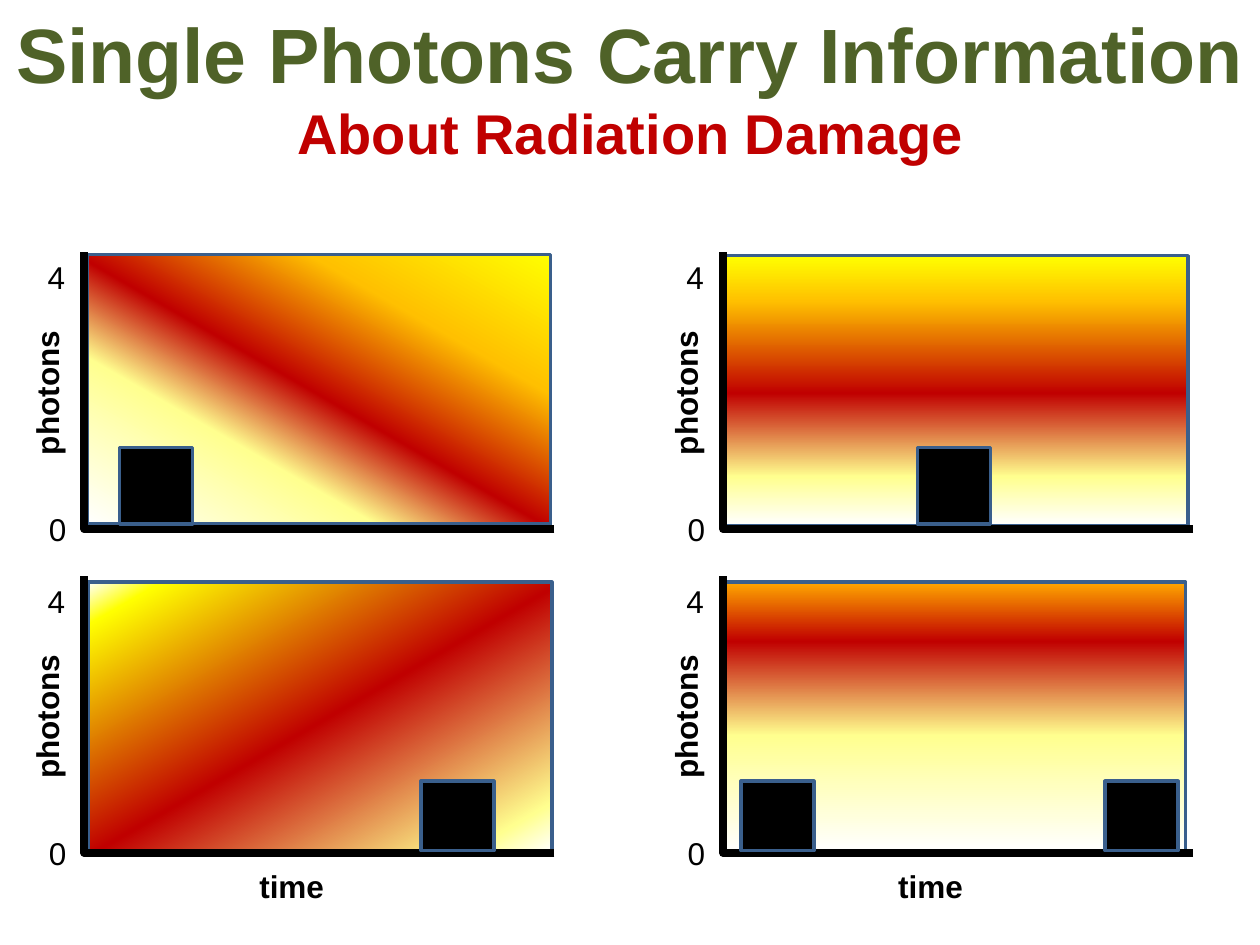
"""Build a slide of four photon-versus-time panels about radiation damage."""
from lxml.etree import SubElement
from pptx import Presentation
from pptx.dml.color import RGBColor
from pptx.enum.shapes import MSO_SHAPE as SHAPE
from pptx.enum.text import MSO_ANCHOR as ANCHOR, MSO_AUTO_SIZE as AUTO, PP_ALIGN as ALIGN
from pptx.oxml.ns import qn
from pptx.util import Pt

BLACK = RGBColor(0, 0, 0)
BLUE = RGBColor(0x3A, 0x5F, 0x8C)
GREEN = RGBColor(0x4F, 0x62, 0x28)
RED = RGBColor(0xC0, 0x00, 0x00)
YELLOW = RGBColor(0xFF, 0xFF, 0x00)
AMBER = RGBColor(0xFF, 0xC0, 0x00)
ORANGE = RGBColor(0xFF, 0xA7, 0x00)
PALE = RGBColor(0xFF, 0xFF, 0x8F)
WHITE = RGBColor(0xFF, 0xFF, 0xFF)

TITLE = [("Single Photons Carry Information", 44, GREEN),
         ("About Radiation Damage", 32, RED)]
PANELS = [
    dict(col=0, row=0, plot=(49.68, 145.44), angle=120, photons=[68.4],
         stops=[(0, YELLOW), (26, AMBER), (51, RED), (69, PALE), (100, WHITE)]),
    dict(col=1, row=0, plot=(414, 146.16), angle=90, photons=[524.16],
         stops=[(0, YELLOW), (17, AMBER), (51, RED), (82, PALE), (100, WHITE)]),
    dict(col=0, row=1, plot=(50.4, 332.64), angle=60, photons=[240.48],
         stops=[(0, WHITE), (8, YELLOW), (51, RED), (91, PALE), (100, WHITE)]),
    dict(col=1, row=1, plot=(412.56, 332.64), angle=90, photons=[423.36, 631.44],
         stops=[(0, ORANGE), (22, RED), (57, PALE), (100, WHITE)]),
]
LEFT, TOP, COL_STEP, ROW_STEP = 48.24, 144, 365.04, 185.04
AXIS_W, AXIS_H = 268.56, 158.4
PLOT_W, PLOT_H = 264.96, 154.08
PHOTON_W = 41.76
PHOTON_ROWS = [(255.6, 43.92), (446.4, 39.6)]
LABEL_W, LABEL_H, DIGIT_W = 118.08, 28.8, 24.48


def add_run(p, text, size=18, color=BLACK, bold=False):
    r = p.add_run()
    r.text = text
    r.font.name = "Arial"
    r.font.size = Pt(size)
    r.font.bold = bold
    r.font.color.rgb = color


def add_label(shapes, text, x, y, w=LABEL_W, wrap=True, rotation=0, **fmt):
    s = shapes.add_textbox(Pt(x), Pt(y), Pt(w), Pt(LABEL_H))
    s.rotation = rotation
    s.text_frame.word_wrap = wrap
    add_run(s.text_frame.paragraphs[0], text, **fmt)


def add_rect(shapes, x, y, w, h):
    s = shapes.add_shape(SHAPE.RECTANGLE, Pt(x), Pt(y), Pt(w), Pt(h))
    s.shadow.inherit = False
    s.line.color.rgb = BLUE
    s.line.width = Pt(2)
    return s


def fill_gradient(s, stops, angle):
    s.fill.gradient()
    s.fill.gradient_angle = 360 - angle
    stop_list = s._element.spPr.find(".//" + qn("a:gsLst"))
    stop_list.clear()
    for pos, color in stops:
        gs = SubElement(stop_list, qn("a:gs"), pos=str(pos * 1000))
        SubElement(gs, qn("a:srgbClr"), val=str(color))


def add_axes(shapes, x, y):
    bottom = y + AXIS_H
    builder = shapes.build_freeform(Pt(x + AXIS_W), Pt(bottom))
    builder.add_line_segments([(Pt(x), Pt(bottom)), (Pt(x), Pt(y))], close=False)
    s = builder.convert_to_shape()
    s.shadow.inherit = False
    s.fill.background()
    s.line.color.rgb = BLACK
    s.line.width = Pt(4.5)


def add_panel(shapes, col, row, plot, angle, photons, stops):
    x, y = LEFT + col * COL_STEP, TOP + row * ROW_STEP
    fill_gradient(add_rect(shapes, *plot, PLOT_W, PLOT_H), stops, angle)
    add_axes(shapes, x, y)
    add_label(shapes, "photons", x - 80.64, y + 49.68, rotation=270, bold=True)
    add_label(shapes, "0", x - 27.36, y + 144, w=DIGIT_W, wrap=False)
    add_label(shapes, "4", x - 28.08, y, w=DIGIT_W, wrap=False)
    if row == 1:
        add_label(shapes, "time", x + 92.88, y + 162.72, bold=True)
    top, height = PHOTON_ROWS[row]
    for left in photons:
        s = add_rect(shapes, left, top, PHOTON_W, height)
        s.fill.solid()
        s.fill.fore_color.rgb = BLACK


def add_title(s):
    s.left, s.top, s.width, s.height = Pt(-1.44), Pt(0), Pt(723.6), Pt(99.36)
    tf = s.text_frame
    tf.word_wrap = False
    tf.auto_size = AUTO.NONE
    tf.vertical_anchor = ANCHOR.TOP
    for i, (text, size, color) in enumerate(TITLE):
        p = tf.add_paragraph() if i else tf.paragraphs[0]
        p.alignment = ALIGN.CENTER
        add_run(p, text, size=size, color=color, bold=True)


def main():
    prs = Presentation()
    prs.slide_width, prs.slide_height = Pt(720), Pt(540)
    slide = prs.slides.add_slide(prs.slide_layouts[5])
    add_title(slide.shapes.title)
    for panel in PANELS:
        add_panel(slide.shapes, **panel)
    prs.save("out.pptx")


if __name__ == "__main__":
    main()
